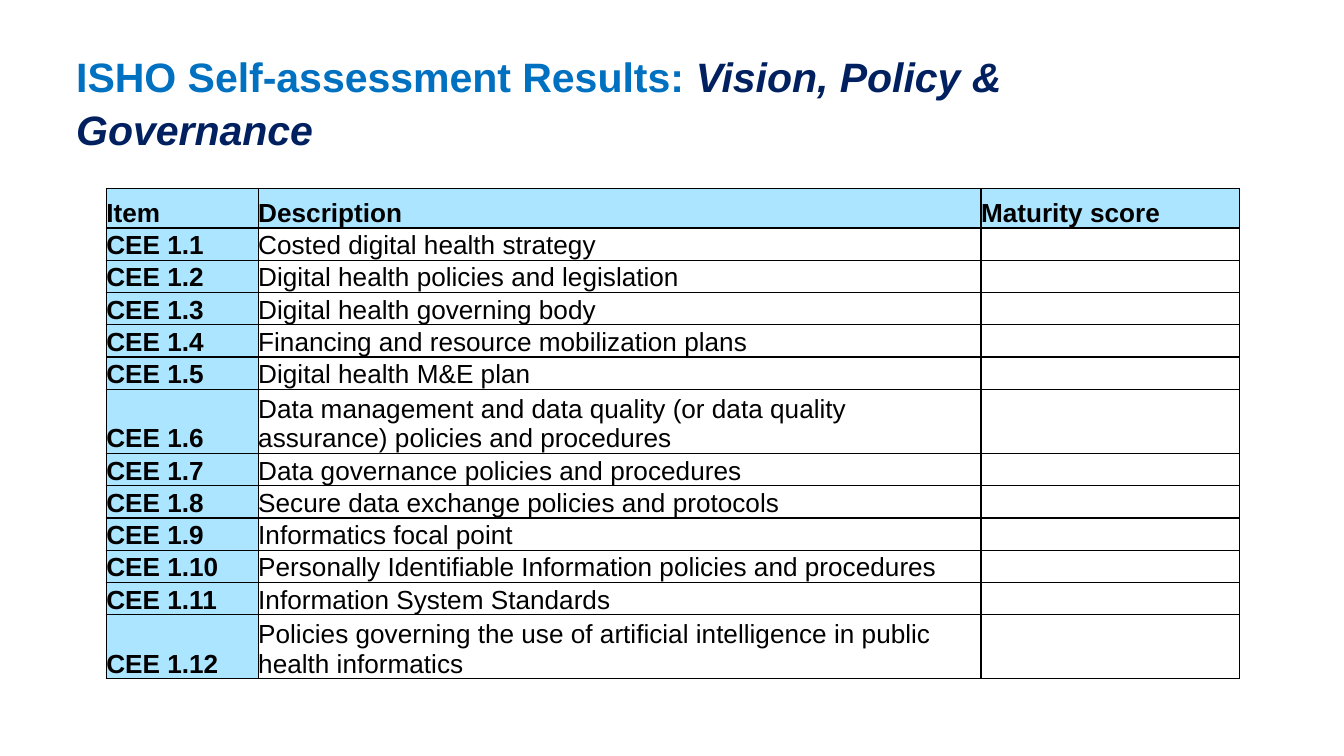
"""Build the slide with the self-assessment results for vision, policy and governance."""
from lxml import etree
from pptx import Presentation
from pptx import util as u
from pptx.dml.color import RGBColor
from pptx.enum import text
from pptx.oxml import ns

HUES = {"blue": "0070C0", "navy": "002060", "sky": "ABE5FF", "black": "000000"}
ITEMS = [
    "Costed digital health strategy",
    "Digital health policies and legislation",
    "Digital health governing body",
    "Financing and resource mobilization plans",
    "Digital health M&E plan",
    "Data management and data quality (or data quality assurance) policies and procedures",
    "Data governance policies and procedures",
    "Secure data exchange policies and protocols",
    "Informatics focal point",
    "Personally Identifiable Information policies and procedures",
    "Information System Standards",
    "Policies governing the use of artificial intelligence in public health informatics",
]
ROWS = [("Item", "Description", "Maturity score")]
ROWS += [(f"CEE 1.{num}", item, "") for num, item in enumerate(ITEMS, 1)]
WIDTHS = [2.87, 13.66, 4.88]
TALL = (6, 12)


def write(para, words, size=14, hue="black", bold=False, slant=False):
    """Add a run of text in the given format."""
    run = para.add_run()
    run.text = words
    font = run.font
    font.name, font.size = "Arial", u.Pt(size)
    font.bold, font.italic = bold, slant
    font.color.rgb = RGBColor.from_string(HUES[hue])


def edge(cell, side, width):
    """Draw a black border on one side of a cell."""
    line = etree.SubElement(cell._tc.get_or_add_tcPr(), ns.qn(f"a:ln{side}"), w=str(u.Pt(width)))
    fill = etree.SubElement(line, ns.qn("a:solidFill"))
    etree.SubElement(fill, ns.qn("a:srgbClr"), val=HUES["black"])


deck = Presentation()
deck.slide_width, deck.slide_height = u.Cm(25.4), u.Cm(14.29)
slide = deck.slides.add_slide(deck.slide_layouts[6])

title = slide.shapes.add_textbox(u.Cm(1.25), u.Cm(0.28), u.Cm(21.03), u.Cm(3.25))
frame = title.text_frame
frame.word_wrap = True
frame.vertical_anchor = text.MSO_ANCHOR.MIDDLE
frame.margin_left = frame.margin_right = u.Cm(0.19)
frame.margin_top = frame.margin_bottom = u.Cm(0.1)
para = frame.paragraphs[0]
para.line_spacing = 1.07
write(para, "ISHO Self-assessment Results: ", size=22, hue="blue", bold=True)
write(para, "Vision, Policy & Governance", size=22, hue="navy", bold=True, slant=True)

grid = slide.shapes.add_table(
    len(ROWS), len(WIDTHS), u.Cm(2.01), u.Cm(3.56), u.Cm(sum(WIDTHS)), u.Cm(9.3)
).table
for col, width in zip(grid.columns, WIDTHS):
    col.width = u.Cm(width)

for row, words in enumerate(ROWS):
    grid.rows[row].height = u.Cm(0.75 if row == 0 else 1.21 if row in TALL else 0.61)
    for col, word in enumerate(words):
        cell = grid.cell(row, col)
        head = row == 0 or col == 0
        cell.margin_left = cell.margin_right = cell.margin_top = cell.margin_bottom = 0
        cell.vertical_anchor = text.MSO_ANCHOR.BOTTOM
        for side in "LRTB":
            edge(cell, side, 1 if side == "L" and col == 0 else 0.75)
        if head:
            cell.fill.solid()
            cell.fill.fore_color.rgb = RGBColor.from_string(HUES["sky"])
        else:
            cell.fill.background()
        para = cell.text_frame.paragraphs[0]
        if word:
            write(para, word, bold=head)
        else:
            etree.SubElement(para._p, ns.qn("a:endParaRPr"), sz="1400")

deck.save("out.pptx")
